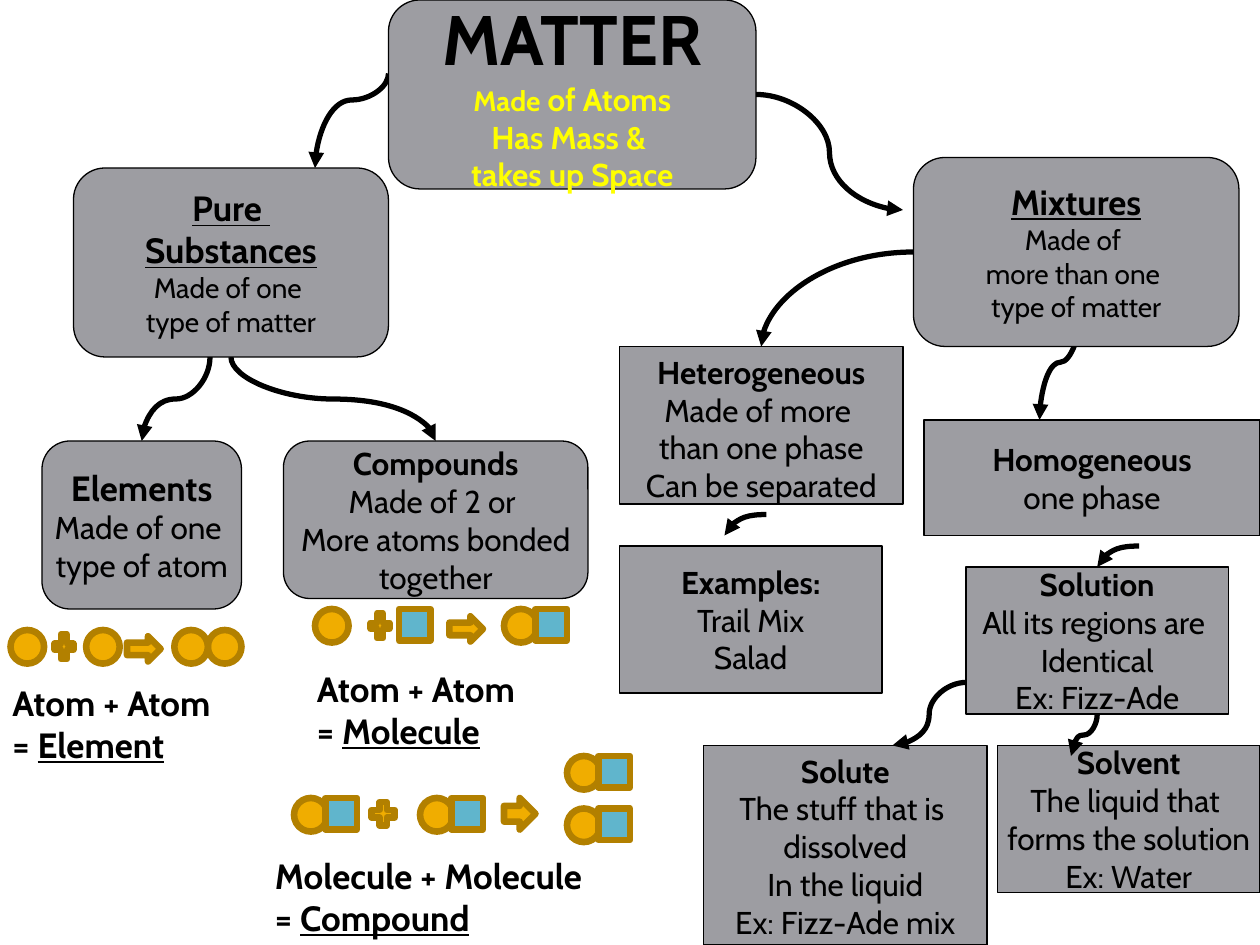
import pptx
import pptx.dml.color
import pptx.enum.shapes
import pptx.enum.text
import pptx.oxml
import pptx.oxml.ns
import pptx.util

RGBColor = pptx.dml.color.RGBColor
Geometry = pptx.enum.shapes.MSO_SHAPE
Align = pptx.enum.text.PP_ALIGN
Anchor = pptx.enum.text.MSO_ANCHOR

GRAY = RGBColor(0x9D, 0x9D, 0xA2)
BLACK = RGBColor(0, 0, 0)
YELLOW = RGBColor(0xFF, 0xFF, 0)
GOLD = RGBColor(0xF0, 0xAD, 0)
BRONZE = RGBColor(0xB2, 0x80, 0)
BLUE = RGBColor(0x60, 0xB5, 0xCC)
FONT = "Cabin"

COLUMNS, ROWS = 120, 90
CELL = pptx.util.Inches(10) // COLUMNS

ATOM = (Geometry.OVAL, GOLD, 3.2, 3.2)
SQUARE = (Geometry.RECTANGLE, BLUE, 3, 3)
PLUS = (Geometry.MATH_PLUS, GOLD, 2.4, 3.2)
WIDE_PLUS = (Geometry.MATH_PLUS, GOLD, 3, 3)
YIELDS = (Geometry.RIGHT_ARROW, GOLD, 3.2, 2.4)
WIDE_YIELDS = (Geometry.RIGHT_ARROW, GOLD, 3, 3)


def grid(cells):
    return round(cells * CELL)


def place(region, box):
    left, top, width, height = box
    return [grid(n) for n in (region[0] + left, region[1] + top, width, height)]


def add_run(paragraph, text, size=18, bold=False, underline=False, color=BLACK):
    run = paragraph.add_run()
    run.text = text
    run.font.name = FONT
    run.font.size = pptx.util.Pt(size)
    run.font.bold = bold
    run.font.underline = underline
    run.font.color.rgb = color


def write_lines(frame, lines, align):
    frame.word_wrap = False
    for index, runs in enumerate(lines):
        paragraph = frame.add_paragraph() if index else frame.paragraphs[0]
        paragraph.alignment = align
        for text, style in runs:
            add_run(paragraph, text, **style)


def add_outline(slide, geometry, position, fill, line, weight):
    outline = slide.shapes.add_shape(geometry, *position)
    outline.shadow.inherit = False
    outline.fill.solid()
    outline.fill.fore_color.rgb = fill
    outline.line.color.rgb = line
    outline.line.width = pptx.util.Pt(weight)
    return outline


def add_node(slide, region, box, lines, geometry=Geometry.RECTANGLE, anchor=Anchor.MIDDLE):
    node = add_outline(slide, geometry, place(region, box), GRAY, BLACK, 0.75)
    node.text_frame.vertical_anchor = anchor
    write_lines(node.text_frame, lines, Align.CENTER)


def describe(titles, details, title_size=18, size=18, underline=False):
    heading = {"size": title_size, "bold": True, "underline": underline}
    return [[(text, heading)] for text in titles] + [[(text, {"size": size})] for text in details]


def add_branch(slide, region, start, end, course="across", bend=0.5):
    x1, y1, x2, y2 = [grid(region[i % 2] + n) for i, n in enumerate((*start, *end))]
    branch = slide.shapes.add_connector(pptx.enum.shapes.MSO_CONNECTOR.CURVE, x1, y1, x2, y2)
    branch.line.color.rgb = BLACK
    branch.line.width = pptx.util.Pt(3)
    properties = branch.element.spPr
    geometry = properties.find(pptx.oxml.ns.qn("a:prstGeom"))
    if course == "corner":
        geometry.set("prst", "curvedConnector2")
    if course == "down":
        width, height = abs(y2 - y1), abs(x2 - x1)
        branch.left, branch.top = (x1 + x2 - width) // 2, (y1 + y2 - height) // 2
        branch.width, branch.height = width, height
        frame = properties.find(pptx.oxml.ns.qn("a:xfrm"))
        frame.set("rot", "5400000")
        frame.set("flipH", "0")
        frame.set("flipV", "1" if x2 > x1 else "0")
    if bend != 0.5:
        guides = geometry.get_or_add_avLst()
        guide = pptx.oxml.parse_xml(f'<a:gd {pptx.oxml.ns.nsdecls("a")} name="adj1" fmla="val {round(bend * 100000)}"/>')
        guides.append(guide)
    line = properties.find(pptx.oxml.ns.qn("a:ln"))
    line.append(pptx.oxml.parse_xml(f'<a:tailEnd {pptx.oxml.ns.nsdecls("a")} type="triangle"/>'))
    properties.append(pptx.oxml.parse_xml(f'<a:effectLst {pptx.oxml.ns.nsdecls("a")}/>'))


def add_particle(slide, region, kind, column, row):
    geometry, fill, width, height = kind
    add_outline(slide, geometry, place(region, (column, row, width, height)), fill, BRONZE, 3.78)


def add_molecule(slide, region, column, row):
    add_particle(slide, region, ATOM, column, row)
    add_particle(slide, region, SQUARE, column + 3, row)


def add_equation(slide, region, box, reactants, product):
    caption = slide.shapes.add_textbox(*place(region, box)).text_frame
    bold = {"size": 20, "bold": True}
    write_lines(caption, [[(reactants, bold)], [("= ", bold), (product, {**bold, "underline": True})]], Align.LEFT)
    caption.auto_size = pptx.enum.text.MSO_AUTO_SIZE.SHAPE_TO_FIT_TEXT


def build_matter(slide, region):
    add_branch(slide, region, (0, 7), (-7, 16), "down", bend=0.28)
    add_branch(slide, region, (35, 9), (49, 20))
    fact = {"bold": True, "color": YELLOW}
    lines = [
        [("MATTER", {"size": 40, "bold": True})],
        [("Made", {**fact, "size": 16}), (" of Atoms", fact)],
        [("Has Mass & ", fact)],
        [("takes up Space", fact)],
    ]
    add_node(slide, region, (0, 0, *region[2:]), lines, Geometry.FLOWCHART_ALTERNATE_PROCESS)


def build_pure_substances(slide, region):
    add_branch(slide, region, (16, 18), (9.5, 26), "down")
    add_branch(slide, region, (18, 18), (37.5, 26), "down")
    rounded = Geometry.ROUNDED_RECTANGLE
    add_node(slide, region, (3, 0, 30, 18),
             describe(["Pure ", "Substances"], ["Made of one ", "type of matter"], 20, 16, True), rounded)
    add_node(slide, region, (0, 26, 19, 16),
             describe(["Elements"], ["Made of one ", "type of atom"], 20), rounded)
    add_node(slide, region, (23, 26, 29, 15),
             describe(["Compounds"], ["Made of 2 or ", "More atoms bonded", "together"]), rounded)


def build_mixtures(slide, region):
    add_branch(slide, region, (44, 14), (40, 25), "down")
    for start, end in (((28, 9), (13.5, 18)), ((49.5, 37), (45.5, 39)), ((14, 34), (10, 36))):
        add_branch(slide, region, start, end, "corner")
    add_node(slide, region, (28, 0, 31, 18),
             describe(["Mixtures"], ["Made of ", "more than one ", "type of matter"], 20, 16, True),
             Geometry.ROUNDED_RECTANGLE)
    kinds = [
        ((0, 18, 27, 15), "Heterogeneous", ["Made of more ", "than one phase", "Can be separated"], Anchor.TOP),
        ((29, 25, 32, 11), "Homogeneous", ["one phase"], Anchor.MIDDLE),
        ((0, 37, 25, 14), "Examples:", ["Trail Mix", "Salad"], Anchor.MIDDLE),
        ((33, 39, 25, 14), "Solution", ["All its regions are ", "Identical", "Ex: Fizz-Ade"], Anchor.MIDDLE),
        ((8, 56, 27, 19), "Solute",
         ["The stuff that is ", "dissolved", "In the liquid", "Ex: Fizz-Ade mix"], Anchor.TOP),
        ((36, 56, 25, 14), "Solvent", ["The liquid that ", "forms the solution", "Ex: Water"], Anchor.MIDDLE),
    ]
    for box, title, details, anchor in kinds:
        add_node(slide, region, box, describe([title], details), anchor=anchor)
    add_branch(slide, region, (33, 50), (26, 56))
    add_branch(slide, region, (45.5, 53), (43, 57), "down")


def build_element_model(slide, region):
    for column in (19.8, 16.6, 1, 8.2):
        add_particle(slide, region, ATOM, column, 0)
    add_particle(slide, region, PLUS, 4.9, 0)
    add_particle(slide, region, YIELDS, 12.1, 0.6)
    add_equation(slide, region, (0, 4.3, 21.6, 9.2), "Atom + Atom", "Element")


def build_molecule_model(slide, region):
    add_particle(slide, region, ATOM, 1, 0)
    add_particle(slide, region, PLUS, 6, 0)
    add_particle(slide, region, SQUARE, 9, 0)
    add_particle(slide, region, YIELDS, 13.8, 0.7)
    add_molecule(slide, region, 19, 0)
    add_equation(slide, region, (0, 5, 21.6, 9.2), "Atom + Atom", "Molecule")


def build_compound_model(slide, region):
    for column, row in ((15, 4), (3, 4), (29, 0), (29, 5)):
        add_molecule(slide, region, column, row)
    add_particle(slide, region, WIDE_YIELDS, 23, 4)
    add_particle(slide, region, WIDE_PLUS, 10, 4)
    add_equation(slide, region, (0, 8.8, 37.2, 9.2), "Molecule + Molecule", "Compound")


def main():
    deck = pptx.Presentation()
    deck.slide_width, deck.slide_height = grid(COLUMNS), grid(ROWS)
    slide = deck.slides.add_slide(deck.slide_layouts[6])
    build_matter(slide, (37, 0, 35, 18))
    build_pure_substances(slide, (4, 16, 52, 42))
    build_mixtures(slide, (59, 15, 61, 75))
    build_element_model(slide, (0, 60, 24, 14))
    build_molecule_model(slide, (29, 58, 26, 15))
    build_compound_model(slide, (25, 72, 38, 18))
    deck.save("out.pptx")


if __name__ == "__main__":
    main()
